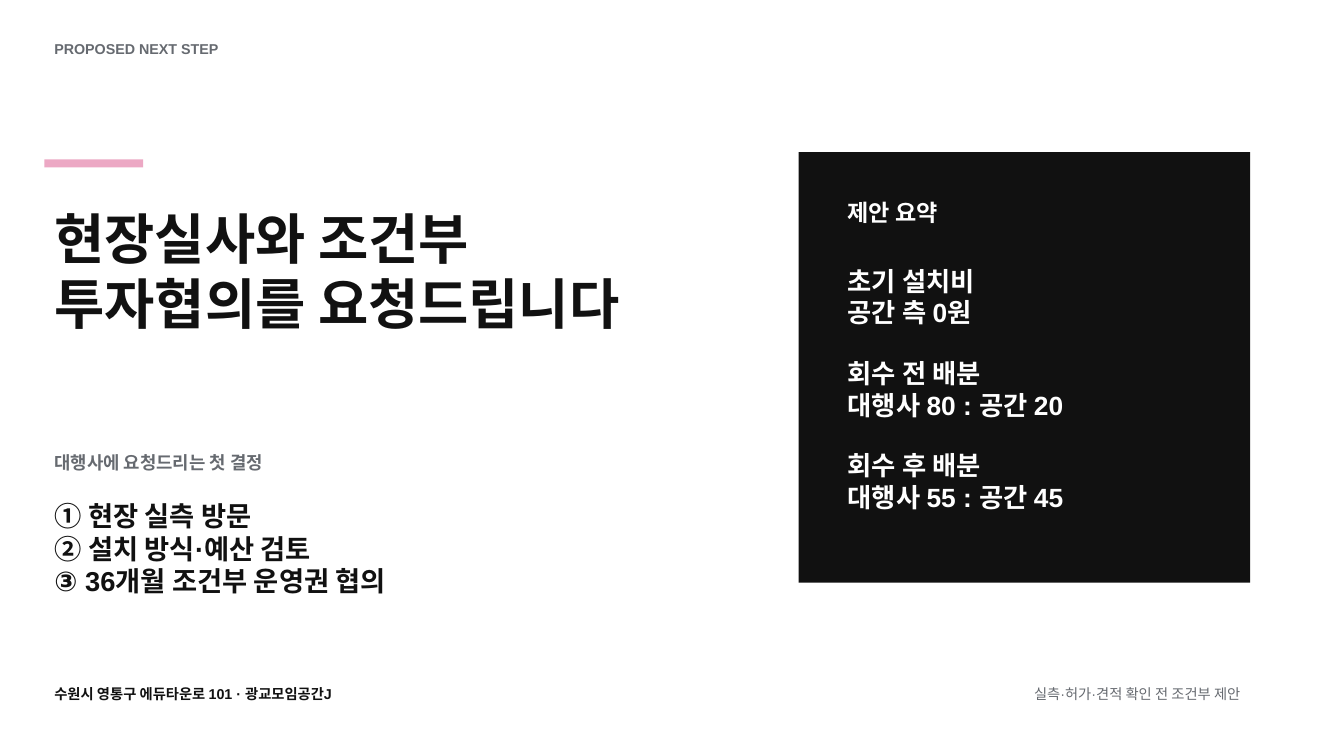
from pptx import Presentation
from pptx.dml.color import RGBColor
from pptx.enum.shapes import MSO_SHAPE as Preset
from pptx.enum.text import MSO_ANCHOR as Anchor, MSO_AUTO_SIZE as AutoSize, PP_ALIGN as Align
from pptx.oxml.ns import qn
from pptx.util import Inches, Pt

INK, GREY, PINK, WHITE = "111111", "666A70", "ECA8C4", "FFFFFF"


def color(value):
    """Turn a hex string into a colour."""
    return RGBColor.from_string(value)


def place(shape, left, top, width, height):
    """Move a shape to a box given in inches."""
    shape.left, shape.top = Inches(left), Inches(top)
    shape.width, shape.height = Inches(width), Inches(height)


def write(shape, groups, size, ink, bold=True, align=Align.LEFT, gap=0):
    """Write groups of lines, with a gap in points between groups."""
    frame = shape.text_frame
    frame.word_wrap = True
    frame.auto_size = AutoSize.NONE
    frame.vertical_anchor = Anchor.TOP
    lines = [(line, gap if group and not row else 0)
             for group, texts in enumerate(groups) for row, line in enumerate(texts)]
    for index, (line, before) in enumerate(lines):
        paragraph = frame.add_paragraph() if index else frame.paragraphs[0]
        properties = paragraph._p.get_or_add_pPr()
        properties.set("marL", "0")
        properties.set("indent", "0")
        properties.append(properties.makeelement(qn("a:buNone"), {}))
        paragraph.alignment = align
        paragraph.space_before = Pt(before)
        run = paragraph.add_run()
        run.text = line
        run.font.name, run.font.size, run.font.bold = "Arial", Pt(size), bold
        run.font.color.rgb = color(ink)


def add_text(slide, box, groups, size, ink, **options):
    """Add a text box with its lines."""
    write(slide.shapes.add_textbox(*map(Inches, box)), groups, size, ink, **options)


def add_block(slide, box, fill):
    """Add a plain filled rectangle."""
    shape = slide.shapes.add_shape(Preset.RECTANGLE, *map(Inches, box))
    shape.shadow.inherit = False
    shape.fill.solid()
    shape.fill.fore_color.rgb = color(fill)
    shape.line.fill.background()


def add_heading(slide, left, top):
    """Place the section label, accent bar and title."""
    add_text(slide, (left, top, 5, 0.27), [["PROPOSED NEXT STEP"]], 10.2, GREY)
    add_block(slide, (left, top + 1.23, 0.98, 0.08), PINK)
    title = slide.shapes.title
    place(title, left, top + 1.63, 7.92, 1.77)
    write(title, [["현장실사와 조건부", "투자협의를 요청드립니다"]], 39, INK)


def add_decisions(slide, left, top):
    """Place the requested decisions under their label."""
    add_text(slide, (left, top, 4.38, 0.31), [["대행사에 요청드리는 첫 결정"]], 12.7, GREY)
    body = slide.placeholders[1]
    place(body, left, top + 0.47, 5.42, 1.25)
    write(body, [["① 현장 실측 방문", "② 설치 방식·예산 검토", "③ 36개월 조건부 운영권 협의"]], 19.5, INK)


def add_summary(slide, left, top, width, height):
    """Place the dark panel with the proposal terms."""
    add_block(slide, (left, top, width, height), INK)
    inner_left, inner_width = left + 0.39, width - 0.83
    add_text(slide, (inner_left, top + 0.41, inner_width, 0.38), [["제안 요약"]], 16.5, WHITE)
    terms = [["초기 설치비", "공간 측 0원"],
             ["회수 전 배분", "대행사 80 : 공간 20"],
             ["회수 후 배분", "대행사 55 : 공간 45"]]
    add_text(slide, (inner_left, top + 1.07, inner_width, 2.6), terms, 18.8, WHITE, gap=20.7)


def add_footer(slide, left, top, width):
    """Place the address on the left and the condition on the right."""
    add_text(slide, (left, top, 7.29, 0.27),
             [["수원시 영통구 에듀타운로 101 · 광교모임공간J"]], 10.2, INK)
    add_text(slide, (left + width - 3.65, top, 3.65, 0.27),
             [["실측·허가·견적 확인 전 조건부 제안"]], 10.2, GREY, bold=False, align=Align.RIGHT)


def main():
    """Build and save the closing slide."""
    presentation = Presentation()
    presentation.slide_width, presentation.slide_height = Inches(13.33), Inches(7.5)
    slide = presentation.slides.add_slide(presentation.slide_layouts[1])
    slide.background.fill.solid()
    slide.background.fill.fore_color.rgb = color(WHITE)
    add_heading(slide, 0.44, 0.35)
    add_decisions(slide, 0.44, 4.43)
    add_summary(slide, 7.92, 1.51, 4.48, 4.27)
    add_footer(slide, 0.44, 6.75, 11.96)
    presentation.save("out.pptx")


if __name__ == "__main__":
    main()
